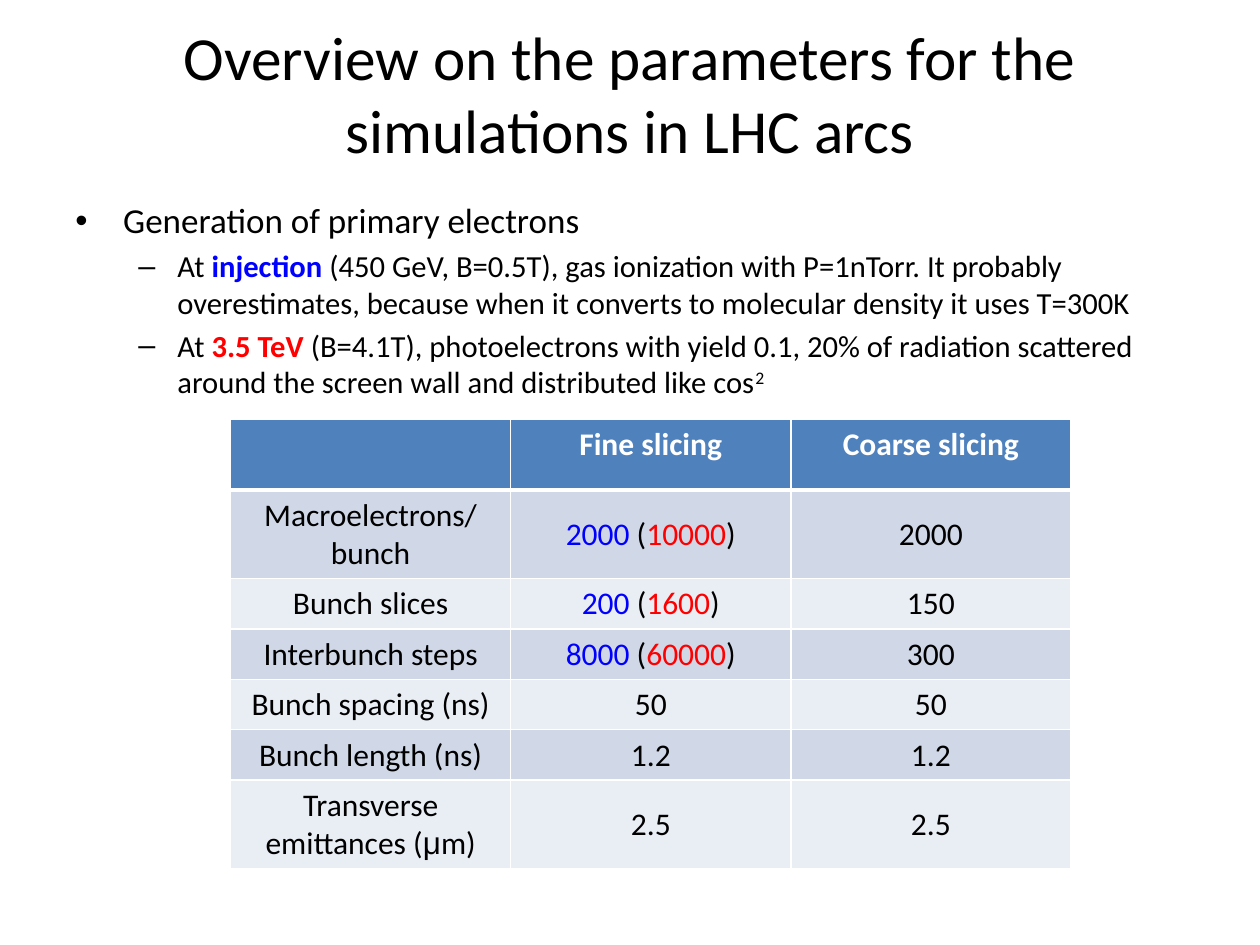
from lxml.etree import SubElement
from pptx import Presentation
from pptx.dml.color import RGBColor
from pptx.enum.text import MSO_ANCHOR as Anchor, PP_ALIGN as Align
from pptx.oxml import parse_xml
from pptx.oxml.ns import nsdecls, qn
from pptx.util import Inches, Pt

BLACK, WHITE, BLUE, RED = "000000", "FFFFFF", "0000FF", "FF0000"
HEAD, BANDS = "4F81BD", ("D0D8E8", "E9EDF4")


def tint(code):
    return RGBColor.from_string(code)


class Deck:
    """Holds the style and the current slide, and adds elements to it."""

    font = "Calibri"

    def __init__(self, slide):
        self.slide = slide

    def run(self, para, text, size, color=BLACK, bold=False, font=None, base=0):
        run = para.add_run()
        run.text = text
        run.font.name = font or self.font
        run.font.size = Pt(size)
        run.font.bold = bold
        run.font.color.rgb = tint(color)
        if base:
            run.font._element.set("baseline", str(base * 1000))

    def runs(self, para, parts, size, **style):
        for part in parts:
            text, extra = (part, {}) if isinstance(part, str) else part
            self.run(para, text, size, **{**style, **extra})

    def box(self, left, top, width, height, anchor=Anchor.TOP):
        area = [Inches(n) for n in (left, top, width, height)]
        frame = self.slide.shapes.add_textbox(*area).text_frame
        frame.word_wrap = True
        frame.vertical_anchor = anchor
        return frame

    def title(self, text, *area):
        para = self.box(*area, anchor=Anchor.MIDDLE).paragraphs[0]
        para.alignment = Align.CENTER
        self.run(para, text, 35)

    def bullets(self, items, *area):
        frame = self.box(*area)
        for i, (level, parts) in enumerate(items):
            para = frame.add_paragraph() if i else frame.paragraphs[0]
            mark, size, left, hang = (("•", 20, 0.38, 0.38), ("–", 17.5, 0.81, 0.31))[level]
            para.level = level
            para.space_before = Pt(size * 0.2)
            props = para._p.get_or_add_pPr()
            props.set("marL", str(Inches(left)))
            props.set("indent", str(-Inches(hang)))
            SubElement(props, qn("a:buFont")).set("typeface", "Arial")
            SubElement(props, qn("a:buChar")).set("char", mark)
            self.runs(para, parts, size)

    def edges(self, cell, head):
        props = cell._tc.get_or_add_tcPr()
        for i, side in enumerate("LRTB"):
            wide = Pt(3 if (head and side == "B") else 1)
            props.insert(i, parse_xml(
                f'<a:ln{side} {nsdecls("a")} w="{wide}"><a:solidFill>'
                f'<a:srgbClr val="{WHITE}"/></a:solidFill></a:ln{side}>'))

    def cell(self, cell, parts, fill, head):
        cell.fill.solid()
        cell.fill.fore_color.rgb = tint(fill)
        cell.vertical_anchor = Anchor.TOP if head else Anchor.MIDDLE
        para = cell.text_frame.paragraphs[0]
        para.alignment = Align.CENTER
        self.runs(para, parts, 18, color=WHITE if head else BLACK, bold=head)
        self.edges(cell, head)

    def table(self, rows, tall, left, top, width):
        area = [Inches(n) for n in (left, top, width, sum(tall))]
        grid = self.slide.shapes.add_table(len(rows), len(rows[0]), *area).table
        for r, row in enumerate(rows):
            grid.rows[r].height = Inches(tall[r])
            fill = BANDS[(r - 1) % 2] if r else HEAD
            for c, parts in enumerate(row):
                self.cell(grid.cell(r, c), parts, fill, r == 0)


def pair(low, high):
    return [(low, {"color": BLUE}), " (", (high, {"color": RED}), ")"]


def main():
    show = Presentation()
    show.slide_width, show.slide_height = Inches(10), Inches(7.5)
    deck = Deck(show.slides.add_slide(show.slide_layouts[6]))
    deck.title("Overview on the parameters for the simulations in LHC arcs",
               0.5, 0.3, 9, 0.87)
    deck.bullets([
        (0, ["Generation of primary electrons"]),
        (1, ["At ", ("injection", {"color": BLUE, "bold": True}),
             " (450 GeV, B=0.5T), gas ionization with P=1nTorr. It probably "
             "overestimates, because when it converts to molecular density it uses T=300K"]),
        (1, ["At ", ("3.5 TeV", {"color": RED, "bold": True}),
             " (B=4.1T), photoelectrons with yield 0.1, 20% of radiation scattered "
             "around the screen wall and distributed like cos", ("2", {"base": 30})]),
    ], 0.5, 1.53, 9, 1.58)
    deck.table([
        [[], ["Fine slicing"], ["Coarse slicing"]],
        [["Macroelectrons/bunch"], pair("2000", "10000"), ["2000"]],
        [["Bunch slices"], pair("200", "1600"), ["150"]],
        [["Interbunch steps"], pair("8000", "60000"), ["300"]],
        [["Bunch spacing (ns)"], ["50"], ["50"]],
        [["Bunch length (ns)"], ["1.2"], ["1.2"]],
        [["Transverse emittances (", ("μ", {"font": "Arial"}), "m)"], ["2.5"], ["2.5"]],
    ], [0.56, 0.7] + [0.4] * 4 + [0.7], 1.83, 3.33, 6.67)
    show.save("out.pptx")


if __name__ == "__main__":
    main()
